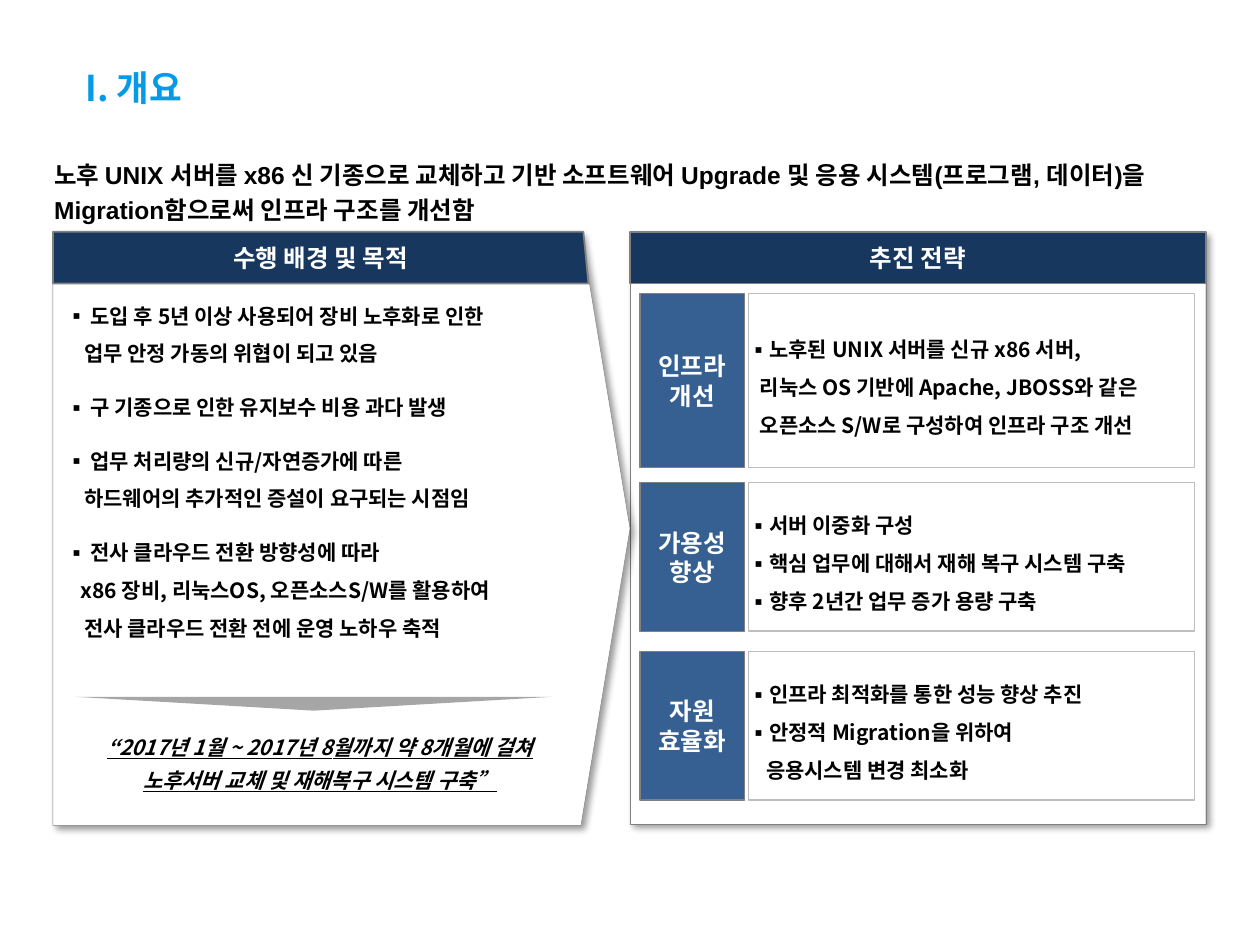
from lxml import etree
from pptx import Presentation, util as u
from pptx.dml.color import RGBColor
from pptx.enum import shapes, text
from pptx.oxml.ns import qn

# The page is a grid of 100 columns by 75 rows
COLUMNS, ROWS = 100, 75
CELL = u.Inches(0.1)
KOREAN = "Noto Sans CJK KR"
NAVY, BLUE, GRAY, SILVER = "17375E", "376092", "808080", "BFBFBF"
BLACK, WHITE = "000000", "FFFFFF"
HEADER_TOP, HEADER_HEIGHT = 18.4, 4.1
LEFT, MIDDLE, RIGHT_WIDTH = 4.2, 50, 45.7

BODY = dict(size=12, color=BLACK)
LABEL = dict(size=14, color=WHITE)
CENTER = text.PP_ALIGN.CENTER

# Each line: text, bulleted or not, left margin in columns, space before in points
BACKGROUND = [
    ("도입 후 5년 이상 사용되어 장비 노후화로 인한", True, 1.9, 0),
    ("업무 안정 가동의 위협이 되고 있음", False, 1.4, 0),
    ("구 기종으로 인한 유지보수 비용 과다 발생", True, 1.9, 9),
    ("업무 처리량의 신규/자연증가에 따른", True, 1.9, 9),
    ("하드웨어의 추가적인 증설이 요구되는 시점임", False, 1.4, 0),
    ("전사 클라우드 전환 방향성에 따라", True, 1.9, 9),
    ("x86 장비, 리눅스OS, 오픈소스S/W를 활용하여", False, 1.1, 0),
    ("전사 클라우드 전환 전에 운영 노하우 축적", False, 1.4, 0),
]

# Each strategy: top row, height, label lines, detail lines
STRATEGIES = [
    (23.3, 13.8, ["인프라", "개선"], [
        ("노후된 UNIX 서버를 신규 x86 서버,", True, 1.3, 0),
        ("리눅스 OS 기반에 Apache, JBOSS와 같은", False, 0.9, 0),
        ("오픈소스 S/W로 구성하여 인프라 구조 개선", False, 0.9, 0)]),
    (38.3, 11.8, ["가용성", "향상"], [
        ("서버 이중화 구성", True, 1.3, 0),
        ("핵심 업무에 대해서 재해 복구 시스템 구축", True, 1.3, 0),
        ("향후 2년간 업무 증가 용량 구축", True, 1.3, 0)]),
    (51.7, 11.8, ["자원", "효율화"], [
        ("인프라 최적화를 통한 성능 향상 추진", True, 1.3, 0),
        ("안정적 Migration을 위하여", True, 1.3, 0),
        ("응용시스템 변경 최소화", False, 1.4, 0)]),
]


def cells(*counts):
    return [int(count * CELL) for count in counts]


def rgb(value):
    return RGBColor.from_string(value)


def paint(shape, fill=None, line=None, width=1):
    shape.shadow.inherit = False
    if fill:
        shape.fill.solid()
        shape.fill.fore_color.rgb = rgb(fill)
    else:
        shape.fill.background()
    if line:
        shape.line.color.rgb = rgb(line)
        shape.line.width = u.Pt(width)
    else:
        shape.line.fill.background()


def add_block(page, kind, area, **look):
    block = page.shapes.add_shape(kind, *cells(*area))
    paint(block, **look)
    return block


def add_shadow(shape):
    effects = shape._element.spPr.find(qn("a:effectLst"))
    shadow = etree.SubElement(effects, qn("a:outerShdw"), blurRad=str(u.Pt(4)),
                              dist=str(u.Pt(3)), dir="2700000", algn="tl", rotWithShape="0")
    color = etree.SubElement(shadow, qn("a:srgbClr"), val=BLACK)
    etree.SubElement(color, qn("a:alpha"), val="40000")


def set_frame(shape, insets=(0, 0, 0, 0), anchor=text.MSO_ANCHOR.MIDDLE):
    frame = shape.text_frame
    left, top, right, bottom = cells(*insets)
    settings = dict(word_wrap=True, vertical_anchor=anchor, margin_left=left,
                    margin_top=top, margin_right=right, margin_bottom=bottom)
    for name, value in settings.items():
        setattr(frame, name, value)
    return frame


def add_textbox(page, area, **options):
    return set_frame(page.shapes.add_textbox(*cells(*area)), **options)


def add_para(frame, words, size, color, latin=KOREAN, italic=False, underline=False, **layout):
    para = frame.paragraphs[0]
    if para.runs:
        para = frame.add_paragraph()
    for name, value in layout.items():
        setattr(para, name, value)
    for number, line in enumerate(words.split("\n")):
        if number:
            para.add_line_break()
        span = para.add_run()
        span.text = line
        style = dict(name=latin, size=u.Pt(size), bold=True, italic=italic, underline=underline)
        for name, value in style.items():
            setattr(span.font, name, value)
        span.font.color.rgb = rgb(color)
        etree.SubElement(span._r.get_or_add_rPr(), qn("a:ea"), typeface=KOREAN)
    return para


def add_lines(frame, lines, hang):
    for words, bulleted, margin, before in lines:
        para = add_para(frame, words, **BODY, alignment=text.PP_ALIGN.LEFT,
                        line_spacing=1.5, space_before=u.Pt(before))
        left, indent = cells(margin, -hang if bulleted else 0)
        properties = para._p.get_or_add_pPr()
        properties.set("marL", str(left))
        properties.set("indent", str(indent))
        if bulleted:
            etree.SubElement(properties, qn("a:buFont"), typeface=KOREAN)
            etree.SubElement(properties, qn("a:buChar"), char="▪")


def add_heading(page):
    title = add_textbox(page, (6.8, 4.6, 84.4, 4.7), insets=(0, 0.5, 1, 0.5))
    add_para(title, "I. 개요", 20.3, "039BE7")
    summary = add_textbox(page, (4.3, 12.2, 88.1, 5.7), anchor=text.MSO_ANCHOR.TOP)
    add_para(summary, "노후 UNIX 서버를 x86 신 기종으로 교체하고 기반 소프트웨어 Upgrade 및 "
             "응용 시스템(프로그램, 데이터)을 Migration함으로써 인프라 구조를 개선함",
             14, BLACK, latin="Arial", line_spacing=1.2)


def add_panels(page):
    kinds = shapes.MSO_SHAPE
    outline = dict(fill=WHITE, line=GRAY, width=0.25)
    strategy = add_block(page, kinds.RECTANGLE, (MIDDLE, HEADER_TOP, RIGHT_WIDTH, 47), **outline)
    arrow = add_block(page, kinds.PENTAGON, (LEFT, HEADER_TOP, MIDDLE - LEFT, 47.1), **outline)
    arrow.adjustments[0] = 0.085
    for panel in (strategy, arrow):
        add_shadow(panel)

    # Header bars; the left one follows the slope of the arrow
    bottom = HEADER_TOP + HEADER_HEIGHT
    builder = page.shapes.build_freeform(*cells(LEFT, bottom))
    builder.add_line_segments([cells(46.7, bottom), cells(46.3, HEADER_TOP),
                               cells(LEFT, HEADER_TOP)], close=True)
    slanted = builder.convert_to_shape()
    paint(slanted, NAVY, GRAY)
    straight = add_block(page, kinds.RECTANGLE, (MIDDLE, HEADER_TOP, RIGHT_WIDTH, HEADER_HEIGHT),
                         fill=NAVY, line=GRAY)
    for bar, words in ((slanted, "수행 배경 및 목적"), (straight, "추진 전략")):
        add_para(set_frame(bar), words, **LABEL, alignment=CENTER)


def add_background(page):
    reasons = add_textbox(page, (4.3, 21.8, 39.2, 33.3), insets=(1, 0.5, 1, 3.5))
    add_lines(reasons, BACKGROUND, hang=1.9)
    pointer = add_block(page, shapes.MSO_SHAPE.ISOSCELES_TRIANGLE, (6, 55.3, 37.8, 1.1),
                        fill="A6A6A6")
    pointer.rotation = 180
    goal = add_textbox(page, (3.5, 57.2, 43.8, 6.3), insets=(1, 0.5, 1, 0.5),
                       anchor=text.MSO_ANCHOR.TOP)
    add_para(goal, "“2017년 1월 ~ 2017년 8월까지 약 8개월에 걸쳐\n노후서버 교체 및 재해복구 시스템 구축”",
             **BODY, italic=True, underline=True, alignment=CENTER, line_spacing=1.3)


def add_strategy(page, top, height, label, details):
    rectangle = shapes.MSO_SHAPE.RECTANGLE
    tag = add_block(page, rectangle, (50.8, top, 8.3, height), fill=BLUE, line=GRAY, width=0.75)
    frame = set_frame(tag, insets=(0.4, 0.5, 0.4, 0.5))
    for words in label:
        add_para(frame, words, **LABEL, alignment=CENTER)
    box = add_block(page, rectangle, (59.4, top, 35.4, height), line=SILVER)
    add_lines(set_frame(box), details, hang=1.3)


def main():
    deck = Presentation()
    deck.slide_width, deck.slide_height = cells(COLUMNS, ROWS)
    page = deck.slides.add_slide(deck.slide_layouts[6])
    add_heading(page)
    add_panels(page)
    add_background(page)
    for strategy in STRATEGIES:
        add_strategy(page, *strategy)
    deck.save("out.pptx")


if __name__ == "__main__":
    main()
